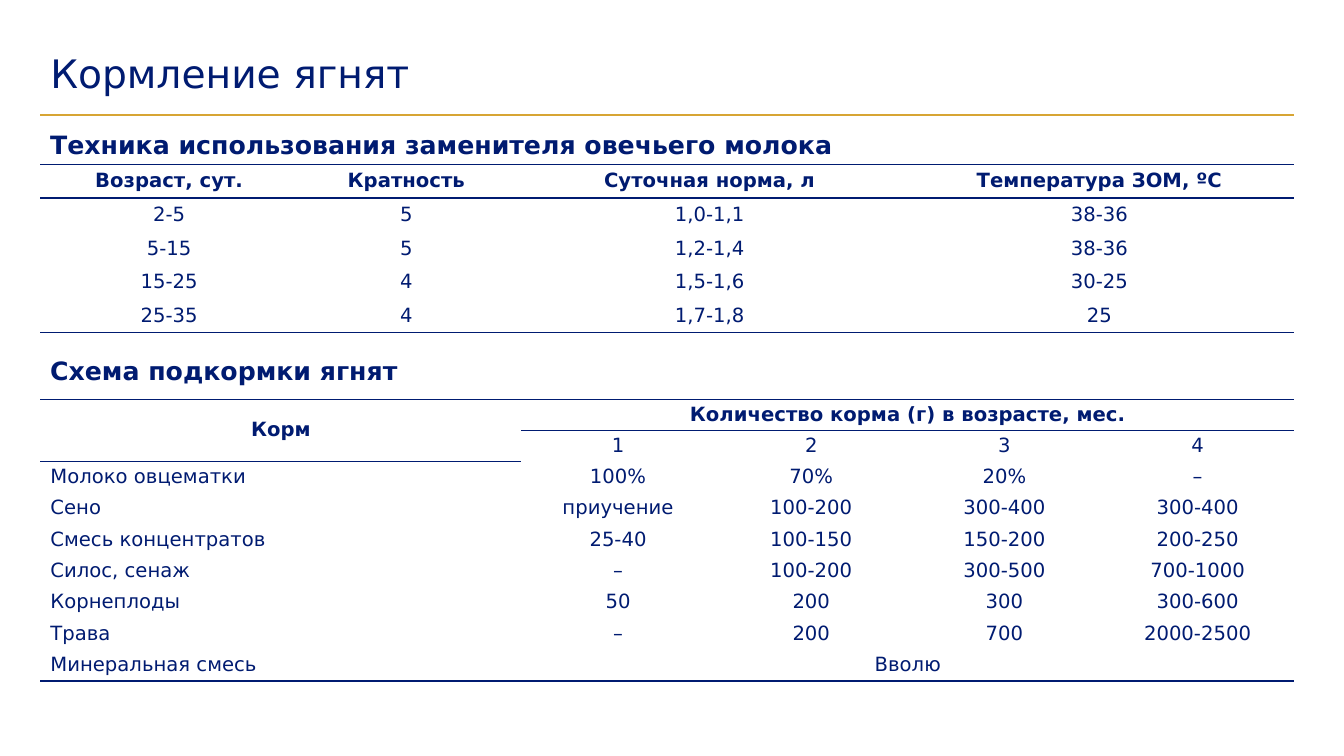
from dataclasses import dataclass

from lxml import etree
from pptx import Presentation
from pptx.dml.color import RGBColor
from pptx.enum.shapes import MSO_CONNECTOR
from pptx.enum.text import MSO_ANCHOR, MSO_AUTO_SIZE, PP_ALIGN
from pptx.oxml.ns import qn
from pptx.util import Pt

LEFT, CENTER = PP_ALIGN.LEFT, PP_ALIGN.CENTER
MIDDLE = MSO_ANCHOR.MIDDLE
NO_FIT = MSO_AUTO_SIZE.NONE
STRAIGHT = MSO_CONNECTOR.STRAIGHT
TITLE_ONLY = 5
PLAIN_TABLE = "{2D5ABB26-0587-4C30-8999-92F81FD0307C}"


@dataclass(frozen=True)
class Theme:
    font: str = "DejaVu Sans"
    navy: str = "001B71"
    gold: str = "D7A534"
    title: int = 28
    heading: int = 18
    cell: int = 14
    line: int = 1


THEME = Theme()
MARGIN, WIDTH = 28.8, 895.7

MILK_ROWS = [
    ["Возраст, сут.", "Кратность", "Суточная норма, л", "Температура ЗОМ, ºС"],
    ["2-5", "5", "1,0-1,1", "38-36"],
    ["5-15", "5", "1,2-1,4", "38-36"],
    ["15-25", "4", "1,5-1,6", "30-25"],
    ["25-35", "4", "1,7-1,8", "25"],
]
FEED_ROWS = [
    ["Корм", "Количество корма (г) в возрасте, мес.", "", "", ""],
    ["", "1", "2", "3", "4"],
    ["Молоко овцематки", "100%", "70%", "20%", "–"],
    ["Сено", "приучение", "100-200", "300-400", "300-400"],
    ["Смесь концентратов", "25-40", "100-150", "150-200", "200-250"],
    ["Силос, сенаж", "–", "100-200", "300-500", "700-1000"],
    ["Корнеплоды", "50", "200", "300", "300-600"],
    ["Трава", "–", "200", "700", "2000-2500"],
    ["Минеральная смесь", "Вволю", "", "", ""],
]


def style_text(tf, size, bold=False, align=LEFT, spacing=1.0):
    p = tf.paragraphs[0]
    p.alignment = align
    p.line_spacing = spacing
    p.space_before = Pt(0)
    for r in p.runs:
        r.font.name = THEME.font
        r.font.size = Pt(size)
        r.font.bold = bold
        r.font.color.rgb = RGBColor.from_string(THEME.navy)


def add_title(slide, text, left, top, width, height):
    """Fill the title placeholder and rule a line below it."""
    sp = slide.shapes.title
    sp.left, sp.top, sp.width, sp.height = map(Pt, (left, top, width, height))
    tf = sp.text_frame
    tf.text = text
    tf.auto_size = NO_FIT
    tf.vertical_anchor = MIDDLE
    style_text(tf, THEME.title, spacing=0.9)

    y = top + height + 6.5
    rule = slide.shapes.add_connector(
        STRAIGHT, Pt(left), Pt(y), Pt(left + width), Pt(y))
    rule.line.color.rgb = RGBColor.from_string(THEME.gold)
    rule.line.width = Pt(THEME.line)
    etree.SubElement(rule._element.spPr, qn("a:effectLst"))


def add_heading(slide, text, left, top, width, height):
    sp = slide.shapes.add_textbox(Pt(left), Pt(top), Pt(width), Pt(height))
    tf = sp.text_frame
    tf.word_wrap = True
    tf.text = text
    style_text(tf, THEME.heading, bold=True)


def add_borders(cell, sides):
    """Draw navy edges; sides holds T for top and B for bottom, in that order."""
    tcPr = cell._tc.get_or_add_tcPr()
    for side in sides:
        ln = etree.SubElement(tcPr, qn(f"a:ln{side}"), w=str(Pt(THEME.line)))
        fill = etree.SubElement(ln, qn("a:solidFill"))
        etree.SubElement(fill, qn("a:srgbClr"), val=THEME.navy)


def add_grid(slide, rows, left, top, col_widths, row_height,
             borders, spacing=1.0, label_from=None, merges=()):
    """Add a table; borders maps (row, column) to sides, label_from is the
    first row whose first column is left-aligned."""
    frame = slide.shapes.add_table(
        len(rows), len(col_widths), Pt(left), Pt(top),
        Pt(sum(col_widths)), Pt(row_height * len(rows)))
    table = frame.table
    table.first_row = table.horz_banding = False
    table._tbl.tblPr.find(qn("a:tableStyleId")).text = PLAIN_TABLE
    for column, width in zip(table.columns, col_widths):
        column.width = Pt(width)
    for i, values in enumerate(rows):
        table.rows[i].height = Pt(row_height)
        for j, value in enumerate(values):
            cell = table.cell(i, j)
            add_borders(cell, borders.get((i, j), ""))
            cell.fill.background()
            cell.vertical_anchor = MIDDLE
            cell.text = value
            is_label = label_from is not None and i >= label_from and j == 0
            style_text(cell.text_frame, THEME.cell, bold=i == 0,
                       align=LEFT if is_label else CENTER, spacing=spacing)
    for first, last in merges:
        table.cell(*first).merge(table.cell(*last))


def add_milk_section(slide, left, top):
    add_heading(slide, "Техника использования заменителя овечьего молока",
                left, top, 652.3, 28.8)
    borders = {(0, j): "TB" for j in range(4)}
    borders |= {(4, j): "B" for j in range(4)}
    add_grid(slide, MILK_ROWS, left, top + 28.8,
             [184.1, 154.8, 278.4, 278.4], 23.7, borders)


def add_feed_section(slide, left, top):
    add_heading(slide, "Схема подкормки ягнят", left, top, 652.3, 28.8)
    borders = {(0, j): "TB" for j in range(1, 5)}
    borders |= {(8, j): "B" for j in range(5)}
    borders |= {(0, 0): "TB", (1, 0): "B"}
    add_grid(slide, FEED_ROWS, left, top + 34.5,
             [343.7] + [138] * 4, 22.3, borders, spacing=0.9, label_from=2,
             merges=[((0, 0), (1, 0)), ((0, 1), (0, 4)), ((8, 1), (8, 4))])


def main():
    prs = Presentation()
    prs.slide_width, prs.slide_height = Pt(960), Pt(540)
    slide = prs.slides.add_slide(prs.slide_layouts[TITLE_ONLY])
    add_title(slide, "Кормление ягнят", MARGIN, 32.4, WIDTH, 43.2)
    add_milk_section(slide, MARGIN, 88.6)
    add_feed_section(slide, MARGIN, 250.6)
    prs.save("out.pptx")


if __name__ == "__main__":
    main()
